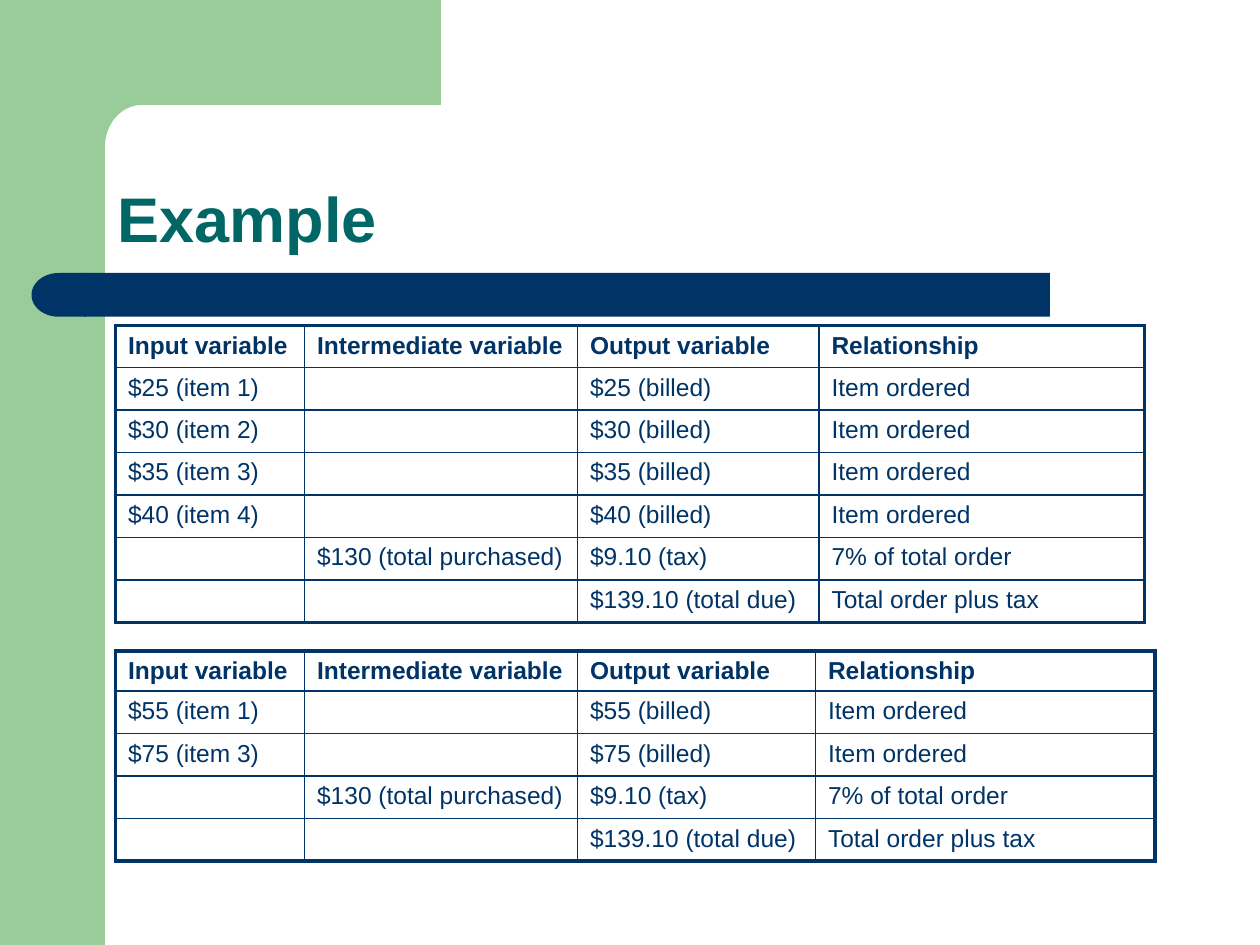
import math

import pptx
import pptx.dml.color
import pptx.enum.shapes
import pptx.enum.text
import pptx.oxml.ns
import pptx.util
from lxml import etree

Pt = pptx.util.Pt
SHAPE = pptx.enum.shapes.MSO_SHAPE
COLORS = {"green": "99CC99", "navy": "003366", "teal": "006666"}

TITLE_FONT = {"name": "Arial", "size": Pt(36), "bold": True}
HEADER_FONT = {"name": "Arial", "size": Pt(14), "bold": True}
BODY_FONT = {**HEADER_FONT, "bold": False}
PLAIN_TABLE = {"first_row": False, "horz_banding": False}
TITLE_FRAME = {
    "word_wrap": True,
    "auto_size": pptx.enum.text.MSO_AUTO_SIZE.NONE,
    "vertical_anchor": pptx.enum.text.MSO_ANCHOR.BOTTOM,
}
TITLE_PARAGRAPH = {"alignment": pptx.enum.text.PP_ALIGN.LEFT, "line_spacing": 0.9}

HEADERS = ["Input variable", "Intermediate variable", "Output variable", "Relationship"]
TOTALS = [
    ["", "$130 (total purchased)", "$9.10 (tax)", "7% of total order"],
    ["", "", "$139.10 (total due)", "Total order plus tax"],
]
FOUR_ITEMS = [(25, 1), (30, 2), (35, 3), (40, 4)]
TWO_ITEMS = [(55, 1), (75, 3)]
ROW_HEIGHT = 23


def apply_format(target, values):
    for attribute, value in values.items():
        setattr(target, attribute, value)


def rgb(color):
    return pptx.dml.color.RGBColor.from_string(COLORS[color])


def paint(shape, color):
    shape.shadow.inherit = False
    shape.fill.solid()
    shape.fill.fore_color.rgb = rgb(color)
    shape.line.fill.background()


def add_block(slide, kind, box, color):
    block = slide.shapes.add_shape(kind, *map(Pt, box))
    paint(block, color)
    return block


def add_corner(slide):
    curve = [
        (81 - 21 * math.sin(angle), 84 - 24 * math.cos(angle))
        for angle in (math.radians(step) for step in range(0, 91, 5))
    ]
    outline = [(252, 0), (252, 60), *curve, (60, 92), (36, 92), (36, 0)]
    scaled = [(Pt(x), Pt(y)) for x, y in outline]
    builder = slide.shapes.build_freeform(*scaled[0])
    builder.add_line_segments(scaled[1:], close=True)
    paint(builder.convert_to_shape(), "green")


def write_title(slide, text):
    title = slide.shapes.title
    apply_format(title, dict(left=Pt(60), top=Pt(60), width=Pt(624), height=Pt(90)))
    title.text = text
    apply_format(title.text_frame, TITLE_FRAME)
    paragraph = title.text_frame.paragraphs[0]
    apply_format(paragraph, TITLE_PARAGRAPH)
    font = paragraph.runs[0].font
    apply_format(font, TITLE_FONT)
    font.color.rgb = rgb("teal")


def add_border(cell, side, width):
    properties = cell._tc.get_or_add_tcPr()
    qn = pptx.oxml.ns.qn
    line = etree.SubElement(properties, qn(f"a:ln{side}"), w=str(Pt(width)))
    fill = etree.SubElement(line, qn("a:solidFill"))
    etree.SubElement(fill, qn("a:srgbClr"), val=COLORS["navy"])


def write_cell(cell, text, font_values):
    paragraph = cell.text_frame.paragraphs[0]
    if text:
        run = paragraph.add_run()
        run.text = text
        apply_format(run.font, font_values)
        run.font.color.rgb = rgb("navy")
    else:
        paragraph._p.get_or_add_endParaRPr().set("sz", "1400")


def add_variable_table(slide, top, widths, header_height, items):
    orders = [
        [f"${price} (item {number})", "", f"${price} (billed)", "Item ordered"]
        for price, number in items
    ]
    rows = [HEADERS, *orders, *TOTALS]
    last_row, last_column = len(rows) - 1, len(widths) - 1
    height = header_height + ROW_HEIGHT * last_row
    table = slide.shapes.add_table(
        len(rows), len(widths), Pt(66), Pt(top), Pt(sum(widths)), Pt(height)
    ).table
    apply_format(table, PLAIN_TABLE)
    for column, width in zip(table.columns, widths):
        column.width = Pt(width)
    for r, texts in enumerate(rows):
        table.rows[r].height = Pt(ROW_HEIGHT if r else header_height)
        for c, text in enumerate(texts):
            cell = table.cell(r, c)
            write_cell(cell, text, BODY_FONT if r else HEADER_FONT)
            outer = {"L": c == 0, "R": c == last_column, "T": r == 0, "B": r == last_row}
            for side, is_outer in outer.items():
                add_border(cell, side, 2.25 if is_outer else 1)
            cell.fill.background()


def main():
    deck = pptx.Presentation()
    apply_format(deck, {"slide_width": Pt(720), "slide_height": Pt(540)})
    slide = deck.slides.add_slide(deck.slide_layouts.get_by_name("Title Only"))
    add_block(slide, SHAPE.RECTANGLE, (0, 0, 60, 540), "green")
    add_corner(slide)
    add_block(slide, SHAPE.RECTANGLE, (48, 156, 552, 25), "navy")
    add_block(slide, SHAPE.FLOWCHART_DELAY, (18, 156, 31, 25), "navy").rotation = 180
    write_title(slide, "Example")
    add_variable_table(slide, 186, [108, 156, 138, 186], 24, FOUR_ITEMS)
    add_variable_table(slide, 372, [108, 156, 136, 194], ROW_HEIGHT, TWO_ITEMS)
    deck.save("out.pptx")


if __name__ == "__main__":
    main()
